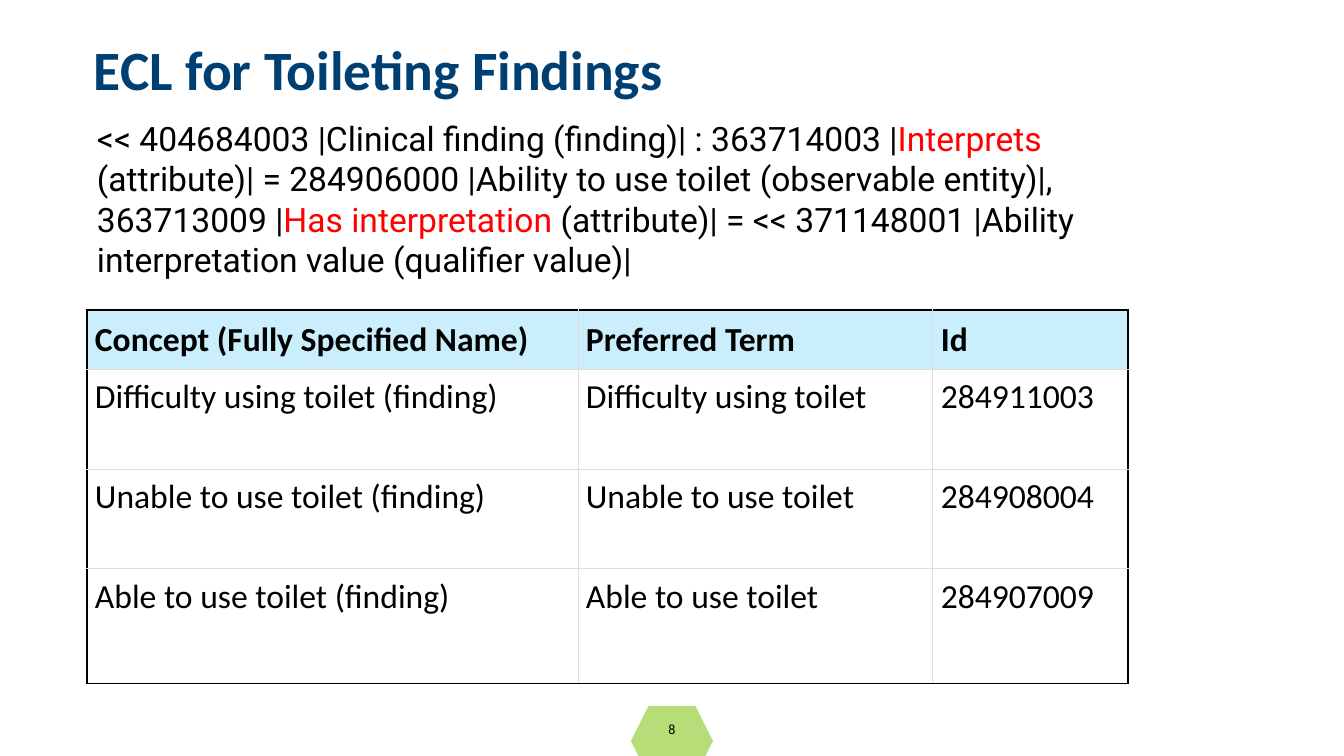
from lxml import etree
from pptx import Presentation
from pptx import util as u
from pptx.dml.color import RGBColor
from pptx.enum import shapes, text
from pptx.oxml.ns import qn

PX = 914400 / 100.8  # EMU in one px

NAVY = RGBColor(0x00, 0x3F, 0x72)
BLACK = RGBColor(0x00, 0x00, 0x00)
WHITE = RGBColor(0xFF, 0xFF, 0xFF)
RED = RGBColor(0xFF, 0x00, 0x00)
GREEN = RGBColor(0xB7, 0xDD, 0x79)
HEADER_BLUE = RGBColor(0xCA, 0xEE, 0xFB)
GRID_GREY = RGBColor(0xDD, 0xDD, 0xDD)

QUERY = [
    ("<< 404684003 |Clinical finding (finding)| : 363714003 |", BLACK),
    ("Interprets ", RED),
    ("(attribute)| = 284906000 |Ability to use toilet (observable entity)|, 363713009 |", BLACK),
    ("Has interpretation ", RED),
    ("(attribute)| = << 371148001 |Ability interpretation value (qualifier value)|", BLACK),
]
FINDINGS = [
    ("Concept (Fully Specified Name)", "Preferred Term", "Id"),
    ("Difficulty using toilet (finding)", "Difficulty using toilet", "284911003"),
    ("Unable to use toilet (finding)", "Unable to use toilet", "284908004"),
    ("Able to use toilet (finding)", "Able to use toilet", "284907009"),
]


def px(*lengths):
    return [u.Emu(round(n * PX)) for n in lengths]


class SlideBuilder:
    heading_font = "Calibri"
    query_font = "Roboto"

    def __init__(self, slide):
        self.slide = slide

    def style(self, run, size, color, font=heading_font, bold=False):
        run.font.name, run.font.size, run.font.bold = font, u.Pt(size), bold
        run.font.color.rgb = color

    def frame(self, shape, margins):
        frame = shape.text_frame
        frame.word_wrap = True
        frame.auto_size = text.MSO_AUTO_SIZE.NONE
        frame.vertical_anchor = text.MSO_ANCHOR.TOP
        (frame.margin_left, frame.margin_top,
         frame.margin_right, frame.margin_bottom) = px(*margins)
        return frame

    def title(self, words, box):
        title = self.slide.shapes.title
        title.left, title.top, title.width, title.height = px(*box)
        frame = self.frame(title, (7, 8, 7, 0))
        frame.text = words
        frame.paragraphs[0].alignment = text.PP_ALIGN.LEFT
        self.style(frame.paragraphs[0].runs[0], 39.6, NAVY, bold=True)

    def text_box(self, parts, box, size, font=heading_font,
                 margins=(10, 10, 10, 10), align=text.PP_ALIGN.LEFT):
        frame = self.frame(self.slide.shapes.add_textbox(*px(*box)), margins)
        paragraph = frame.paragraphs[0]
        paragraph.alignment = align
        for words, color in parts:
            run = paragraph.add_run()
            run.text = words
            self.style(run, size, color, font)

    def hexagon(self, box, color):
        hexagon = self.slide.shapes.add_shape(shapes.MSO_SHAPE.HEXAGON, *px(*box))
        hexagon.shadow.inherit = False
        hexagon.fill.solid()
        hexagon.fill.fore_color.rgb = color
        hexagon.line.fill.background()

    def borders(self, cell, outer_sides):
        properties = cell._tc.get_or_add_tcPr()
        for place, side in enumerate("LRTB"):
            outer = side in outer_sides
            line = etree.Element(qn(f"a:ln{side}"), w=str(u.Pt(1 if outer else 0.75)))
            fill = etree.SubElement(line, qn("a:solidFill"))
            etree.SubElement(fill, qn("a:srgbClr"), val=str(BLACK if outer else GRID_GREY))
            properties.insert(place, line)

    def table(self, rows, left, top, widths, heights):
        table = self.slide.shapes.add_table(
            len(rows), len(widths), *px(left, top, sum(widths), sum(heights))).table
        table.horz_banding = False
        for column, width in zip(table.columns, px(*widths)):
            column.width = width
        for row, height in zip(table.rows, px(*heights)):
            row.height = height
        for r, row in enumerate(rows):
            for c, words in enumerate(row):
                cell = table.cell(r, c)
                header = r == 0
                cell.fill.solid()
                cell.fill.fore_color.rgb = HEADER_BLUE if header else WHITE
                cell.vertical_anchor = text.MSO_ANCHOR.BOTTOM if header else text.MSO_ANCHOR.TOP
                (cell.margin_left, cell.margin_top,
                 cell.margin_right, cell.margin_bottom) = px(8, 8, 8, 8)
                cell.text_frame.text = words
                self.style(cell.text_frame.paragraphs[0].runs[0], 24, BLACK, bold=header)
                edges = {"L": c == 0, "R": c == len(widths) - 1,
                         "T": r == 0, "B": r == len(rows) - 1}
                self.borders(cell, [side for side, at_edge in edges.items() if at_edge])


def main():
    deck = Presentation()
    deck.slide_width, deck.slide_height = px(1344, 756)
    builder = SlideBuilder(deck.slides.add_slide(deck.slide_layouts[5]))

    # Page number on its hexagon
    builder.hexagon((631, 706, 82, 70), GREEN)
    builder.text_box([("8", BLACK)], (521, 716, 302, 40), 10,
                     margins=(10, 5, 10, 5), align=text.PP_ALIGN.CENTER)

    # Title and query
    builder.title("ECL for Toileting Findings", (87, 27, 844, 72))
    builder.text_box(QUERY, (87, 108, 1069, 194), 24, SlideBuilder.query_font)

    # Matching findings
    builder.table(FINDINGS, 87, 310, (491, 355, 195), (59, 100, 100, 115))

    deck.save("out.pptx")


if __name__ == "__main__":
    main()
